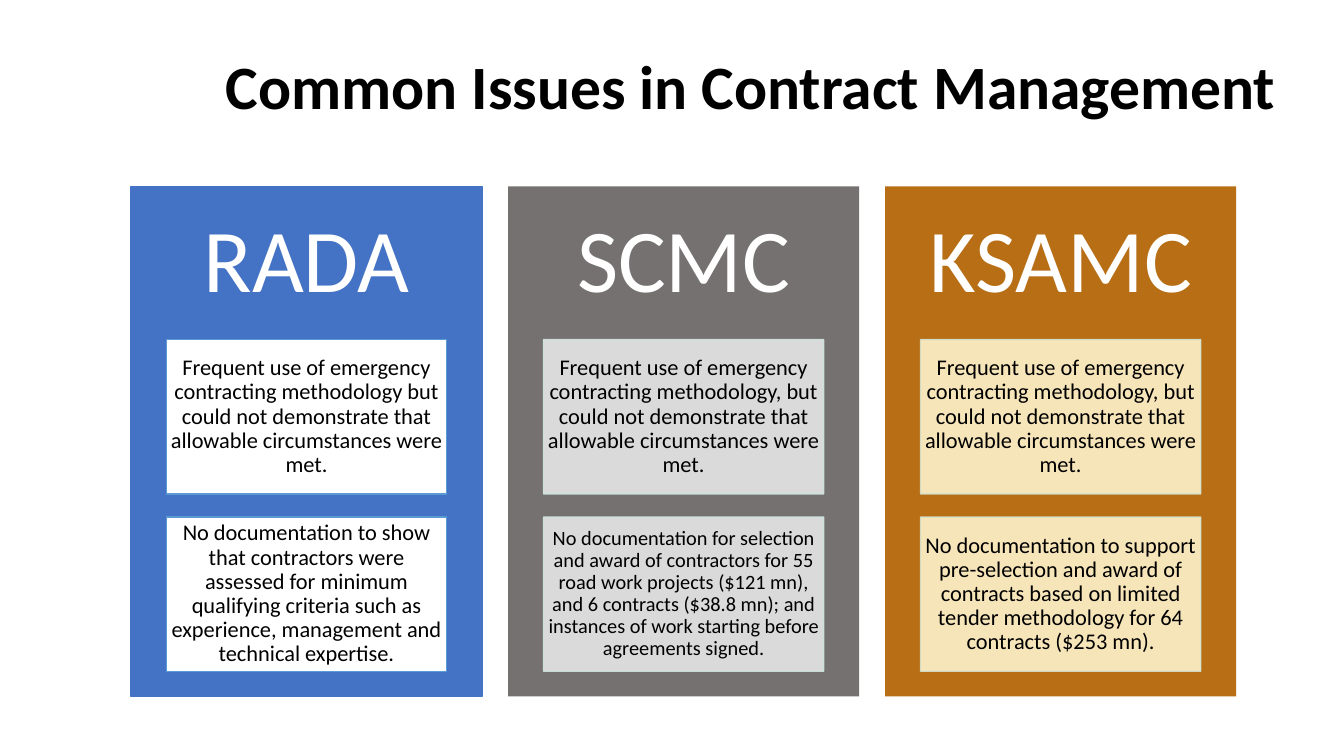
"""Build the slide on common issues in contract management."""
import pptx
import pptx.dml.color
import pptx.enum.shapes
import pptx.enum.text
import pptx.oxml
import pptx.oxml.ns
import pptx.util

Inches = pptx.util.Inches
Pt = pptx.util.Pt
ALIGN = pptx.enum.text.PP_ALIGN

EMERGENCY = ("Frequent use of emergency contracting methodology{} but could not "
             "demonstrate that allowable circumstances were met.")

AGENCIES = [
    ("RADA", "4472C4", "FFFFFF", "5B9BD5", 100, [
        (EMERGENCY.format(""), 16),
        ("No documentation to show that contractors were assessed for minimum "
         "qualifying criteria such as experience, management and technical expertise.", 16),
    ]),
    ("SCMC", "767171", "E7E6E6", "CFE6E0", 90, [
        (EMERGENCY.format(","), 16),
        ("No documentation for selection and award of contractors for 55 road work "
         "projects ($121 mn), and 6 contracts ($38.8 mn); and instances of work "
         "starting before agreements signed.", 14.5),
    ]),
    ("KSAMC", "B76E15", "FFF2CC", "D5E3CF", 90, [
        (EMERGENCY.format(","), 16),
        ("No documentation to support pre-selection and award of contracts based on "
         "limited tender methodology for 64 contracts ($253 mn).", 16),
    ]),
]


def color(value):
    return pptx.dml.color.RGBColor.from_string(value)


class SlideBuilder:
    def __init__(self, page, font):
        self.page = page
        self.font = font

    def add_text(self, shape, text, size, ink, align, insets, bold=False):
        frame = shape.text_frame
        frame.word_wrap = True
        frame.auto_size = pptx.enum.text.MSO_AUTO_SIZE.NONE
        frame.vertical_anchor = pptx.enum.text.MSO_ANCHOR.MIDDLE
        across, down = insets
        frame.margin_left = frame.margin_right = Inches(across)
        frame.margin_top = frame.margin_bottom = Inches(down)
        para = frame.paragraphs[0]
        para.alignment = align
        para.line_spacing = 0.9
        para.space_before = Pt(0)
        span = para.add_run()
        span.text = text
        span.font.name = self.font
        span.font.size = Pt(size)
        span.font.bold = bold
        span.font.color.rgb = color(ink)

    def title(self, text, left, top, width, height):
        holder = self.page.shapes.title
        holder.left, holder.top = Inches(left), Inches(top)
        holder.width, holder.height = Inches(width), Inches(height)
        self.add_text(holder, text, 44, "000000", ALIGN.LEFT, (0.1, 0.05), bold=True)

    def panel(self, left, top, width, height, fill, line=None, opacity=100):
        shape = self.page.shapes.add_shape(
            pptx.enum.shapes.MSO_SHAPE.RECTANGLE,
            Inches(left), Inches(top), Inches(width), Inches(height))
        shape.shadow.inherit = False
        shape.fill.solid()
        shape.fill.fore_color.rgb = color(fill)
        if line:
            shape.line.color.rgb = color(line)
            shape.line.width = Pt(1)
        else:
            shape.line.fill.background()
        if opacity < 100:
            for tint in shape.element.spPr.iter(pptx.oxml.ns.qn("a:srgbClr")):
                alpha = pptx.oxml.parse_xml(
                    f'<a:alpha {pptx.oxml.ns.nsdecls("a")} val="{opacity * 1000}"/>')
                tint.append(alpha)
        return shape

    def heading(self, text, left, top, width, height):
        box = self.page.shapes.add_textbox(
            Inches(left), Inches(top), Inches(width), Inches(height))
        self.add_text(box, text, 64, "FFFFFF", ALIGN.CENTER, (0.27, 0.27))

    def card(self, text, size, left, top, width, height, fill, line, opacity):
        shape = self.panel(left, top, width, height, fill, line, opacity)
        self.add_text(shape, text, size, "000000", ALIGN.CENTER, (0.04, 0.03))


def main():
    deck = pptx.Presentation()
    deck.slide_width, deck.slide_height = Inches(13.33), Inches(7.5)
    page = deck.slides.add_slide(deck.slide_layouts[5])
    builder = SlideBuilder(page, "Calibri")
    builder.title("Common Issues in Contract Management", 2.14, 0.37, 10.74, 1.03)

    top, width, height = 1.85, 3.48, 5.06
    card_width, card_height = 2.78, 1.53
    for column, (name, fill, card_fill, line, opacity, issues) in enumerate(AGENCIES):
        left = 1.3 + 3.74 * column
        builder.panel(left, top, width, height, fill, fill if column == 0 else None)
        builder.heading(name, left, top, width, 1.52)
        for row, (issue, size) in enumerate(issues):
            builder.card(issue, size, left + (width - card_width) / 2, 3.37 + 1.76 * row,
                         card_width, card_height, card_fill, line, opacity)
    deck.save("out.pptx")


if __name__ == "__main__":
    main()
